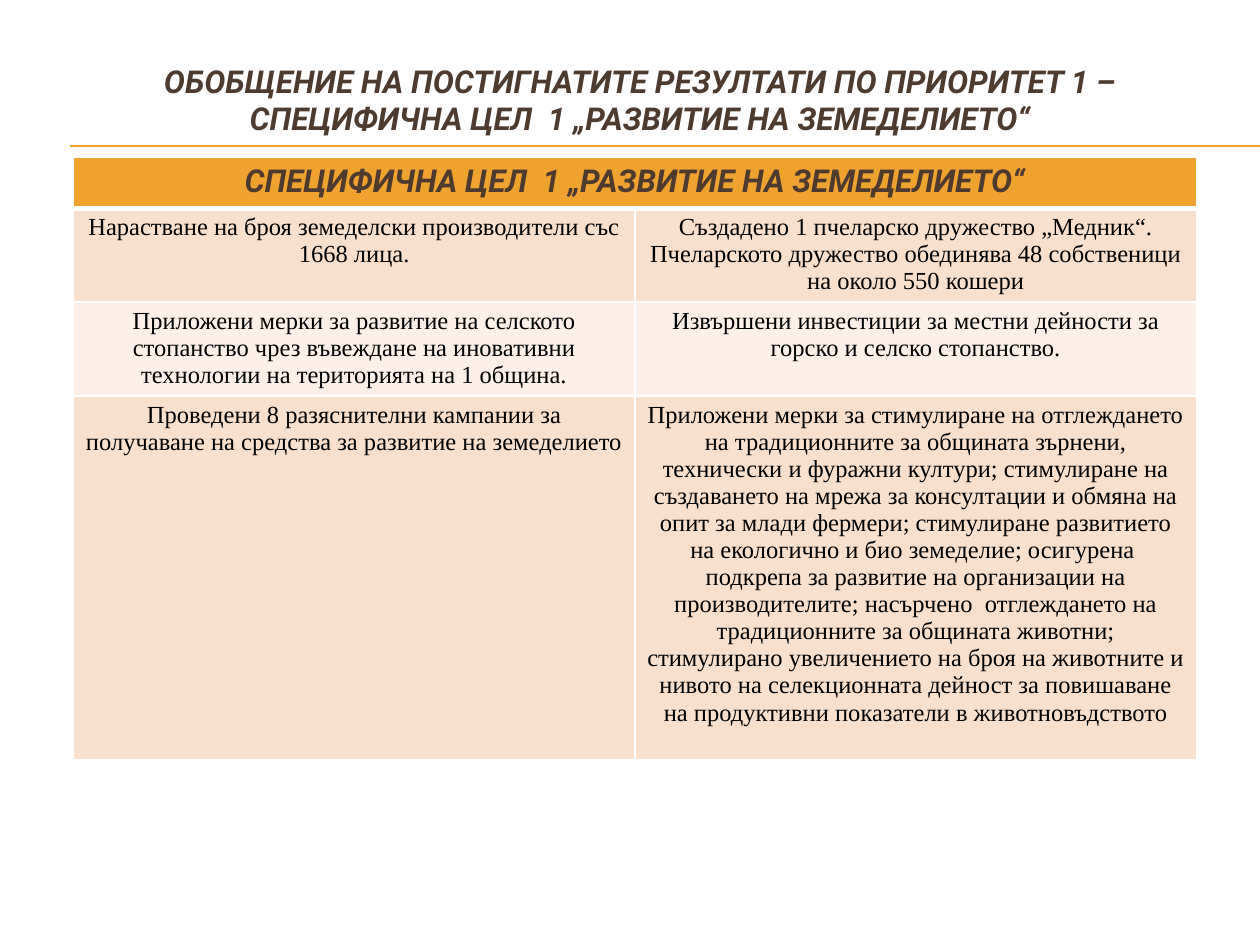
from lxml.etree import SubElement
from pptx import Presentation
from pptx.dml.color import RGBColor
from pptx.enum.shapes import MSO_CONNECTOR
from pptx.enum.text import MSO_ANCHOR, PP_ALIGN
from pptx.oxml.ns import qn
from pptx.util import Cm, Pt

AMBER, BROWN, BLACK, WHITE = "F0A22E", "4E3B30", "000000", "FFFFFF"
BAND_DARK, BAND_LIGHT = "F9E0CD", "FCF0E8"
GOAL = "СПЕЦИФИЧНА ЦЕЛ  1 „РАЗВИТИЕ НА ЗЕМЕДЕЛИЕТО“"


def color(value):
    return RGBColor.from_string(value)


def write(frame, paragraphs, heading=False):
    for index, text in enumerate(paragraphs):
        para = frame.paragraphs[0] if index == 0 else frame.add_paragraph()
        para.alignment = PP_ALIGN.CENTER
        span = para.add_run()
        span.text = text
        span.font.name = "Roboto" if heading else "Times New Roman"
        span.font.size = Pt(18 if heading else 14)
        span.font.bold = span.font.italic = heading
        span.font.color.rgb = color(BROWN if heading else BLACK)


deck = Presentation()
deck.slide_width, deck.slide_height = Cm(25.4), Cm(19.05)
page = deck.slides.add_slide(deck.slide_layouts[6])

# Double rule under the title
for height in (2.93, 2.95):
    rule = page.shapes.add_connector(
        MSO_CONNECTOR.STRAIGHT, Cm(1.42), Cm(height), Cm(25.4), Cm(height))
    rule.line.color.rgb = color(AMBER)
    rule.line.width = Pt(0.75)
    SubElement(rule.element.spPr, qn("a:effectLst"))

# Title
box = page.shapes.add_textbox(Cm(0.84), Cm(1.27), Cm(24.13), Cm(1.47))
frame = box.text_frame
frame.word_wrap = True
frame.vertical_anchor = MSO_ANCHOR.MIDDLE
frame.margin_left = frame.margin_right = Cm(1.2)
write(frame, ["ОБОБЩЕНИЕ НА ПОСТИГНАТИТЕ РЕЗУЛТАТИ ПО ПРИОРИТЕТ 1 – " + GOAL], heading=True)

# Results: one list of paragraphs per cell
results = [
    [["Нарастване на броя земеделски производители със 1668 лица."],
     ["Създадено 1 пчеларско дружество „Медник“. Пчеларското дружество обединява "
      "48 собственици на около 550 кошери"]],
    [["Приложени мерки за развитие на селското стопанство чрез въвеждане на "
      "иновативни технологии на територията на 1 община."],
     ["Извършени инвестиции за местни дейности за горско и селско стопанство."]],
    [["Проведени 8 разяснителни кампании за получаване на средства за развитие "
      "на земеделието"],
     ["Приложени мерки за стимулиране на отглеждането на традиционните за общината "
      "зърнени, технически и фуражни култури; стимулиране на създаването на мрежа за "
      "консултации и обмяна на опит за млади фермери; стимулиране развитието на "
      "екологично и био земеделие; осигурена  подкрепа за развитие на организации на "
      "производителите; насърчено  отглеждането на традиционните за общината животни;",
      "стимулирано увеличението на броя на животните и нивото на селекционната дейност "
      "за повишаване на продуктивни показатели в животновъдството"]],
]
row_heights = [1.02, 1.89, 1.89, 7.33]
column_width = 11.32
table = page.shapes.add_table(
    4, 2, Cm(1.48), Cm(3.18), Cm(2 * column_width), Cm(sum(row_heights))).table
for column in table.columns:
    column.width = Cm(column_width)
for row, height in zip(table.rows, row_heights):
    row.height = Cm(height)

# Cell margins, row fills and white borders, thicker below the header
row_fills = [AMBER, BAND_DARK, BAND_LIGHT, BAND_DARK]
for row_index, row in enumerate(table.rows):
    for cell in row.cells:
        cell.margin_left = cell.margin_right = Cm(0.22)
        cell.margin_top, cell.margin_bottom = Cm(0.11), Cm(0)
        properties = cell._tc.get_or_add_tcPr()
        for side in ("L", "R", "T", "B"):
            thick = (row_index, side) in ((0, "B"), (1, "T"))
            border = SubElement(properties, qn("a:ln" + side), w=str(Pt(3 if thick else 1)))
            fill = SubElement(border, qn("a:solidFill"))
            SubElement(fill, qn("a:srgbClr"), val=WHITE)
        cell.fill.solid()
        cell.fill.fore_color.rgb = color(row_fills[row_index])

# Table text
table.cell(0, 0).merge(table.cell(0, 1))
write(table.cell(0, 0).text_frame, [GOAL], heading=True)
for row_index, row_texts in enumerate(results, start=1):
    for column_index, paragraphs in enumerate(row_texts):
        write(table.cell(row_index, column_index).text_frame, paragraphs)

deck.save("out.pptx")
